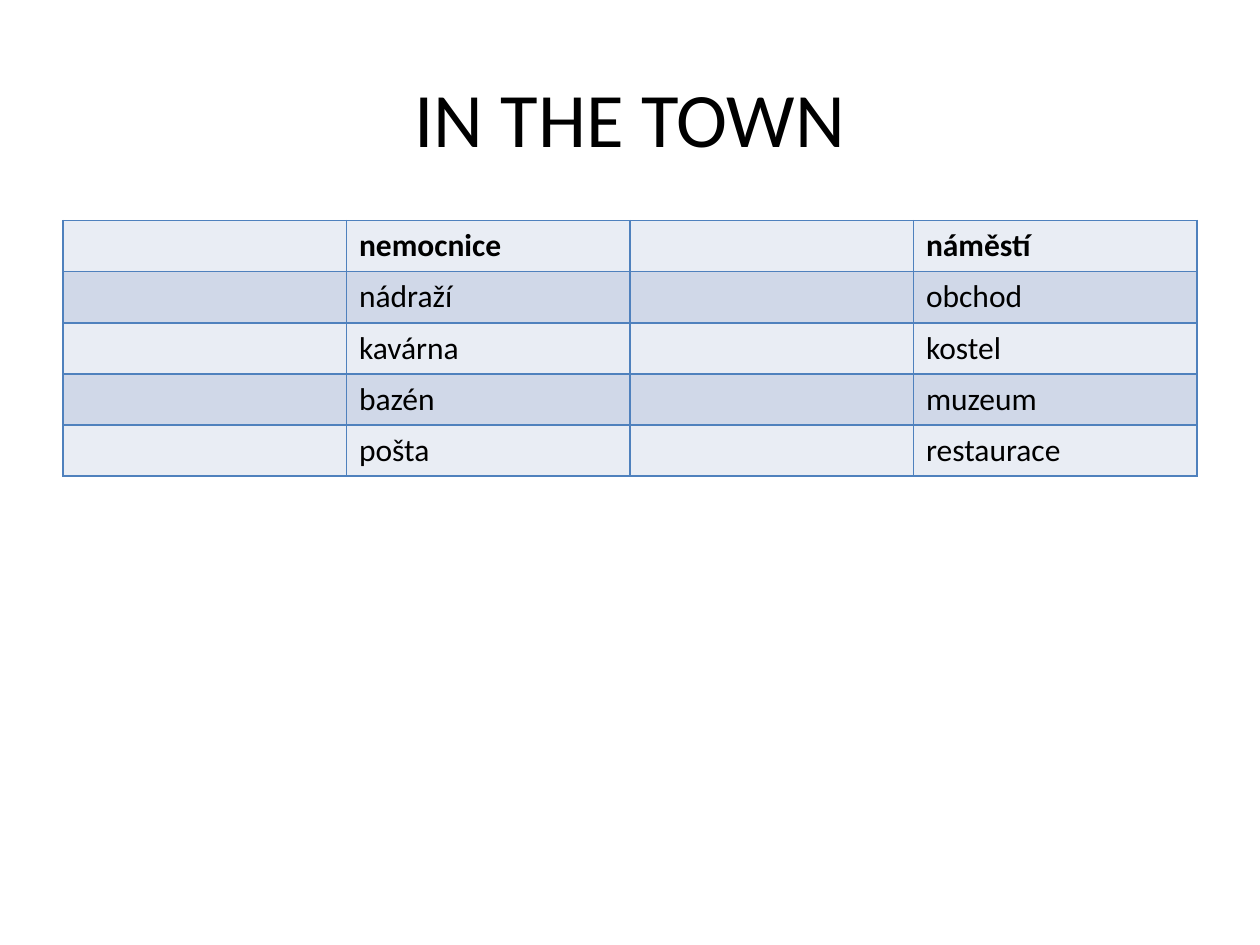
from lxml import etree
from pptx import Presentation
from pptx.dml.color import RGBColor
from pptx.enum.text import MSO_ANCHOR, PP_ALIGN
from pptx.oxml.ns import qn
from pptx.util import Inches, Pt

FONT = "Calibri"
TEXT = "000000"
BORDER = "4F81BD"
BANDS = ("E9EDF4", "D0D8E8")
PLACES = [
    ("nemocnice", "náměstí"),
    ("nádraží", "obchod"),
    ("kavárna", "kostel"),
    ("bazén", "muzeum"),
    ("pošta", "restaurace"),
]


def color(hex_value):
    return RGBColor.from_string(hex_value)


def add_run(paragraph, text, size, bold=False):
    run = paragraph.add_run()
    run.text = text
    run.font.name = FONT
    run.font.size = Pt(size)
    run.font.bold = bold
    run.font.color.rgb = color(TEXT)


def add_title(slide, left, top, width, height):
    title = slide.shapes.add_textbox(left, top, width, height)
    frame = title.text_frame
    frame.word_wrap = True
    frame.vertical_anchor = MSO_ANCHOR.MIDDLE
    heading = frame.paragraphs[0]
    heading.alignment = PP_ALIGN.CENTER
    add_run(heading, "IN THE TOWN", 44)


def add_borders(cell):
    """Draw all four sides; borders must precede the fill in the cell XML."""
    properties = cell._tc.get_or_add_tcPr()
    for position, side in enumerate(("lnL", "lnR", "lnT", "lnB")):
        line = etree.Element(qn(f"a:{side}"), w=str(Pt(1)))
        fill = etree.SubElement(line, qn("a:solidFill"))
        etree.SubElement(fill, qn("a:srgbClr"), val=BORDER)
        properties.insert(position, line)


def add_vocabulary(slide, left, top, width, height):
    """Place the Czech words, each with an empty cell before it to fill in."""
    rows = [("", first, "", second) for first, second in PLACES]
    vocabulary = slide.shapes.add_table(
        len(rows), len(rows[0]), left, top, width, height
    ).table
    for row_index, words in enumerate(rows):
        for column_index, word in enumerate(words):
            cell = vocabulary.cell(row_index, column_index)
            cell.fill.solid()
            cell.fill.fore_color.rgb = color(BANDS[row_index % 2])
            add_borders(cell)
            if word:
                add_run(cell.text_frame.paragraphs[0], word, 18, bold=row_index == 0)


def main():
    presentation = Presentation()
    presentation.slide_width = Inches(10)
    presentation.slide_height = Inches(7.5)
    slide = presentation.slides.add_slide(presentation.slide_layouts[6])
    add_title(slide, Inches(0.5), Inches(0.3), Inches(9), Inches(1.25))
    add_vocabulary(slide, Inches(0.5), Inches(1.75), Inches(9), Inches(2.03))
    presentation.save("out.pptx")


if __name__ == "__main__":
    main()
